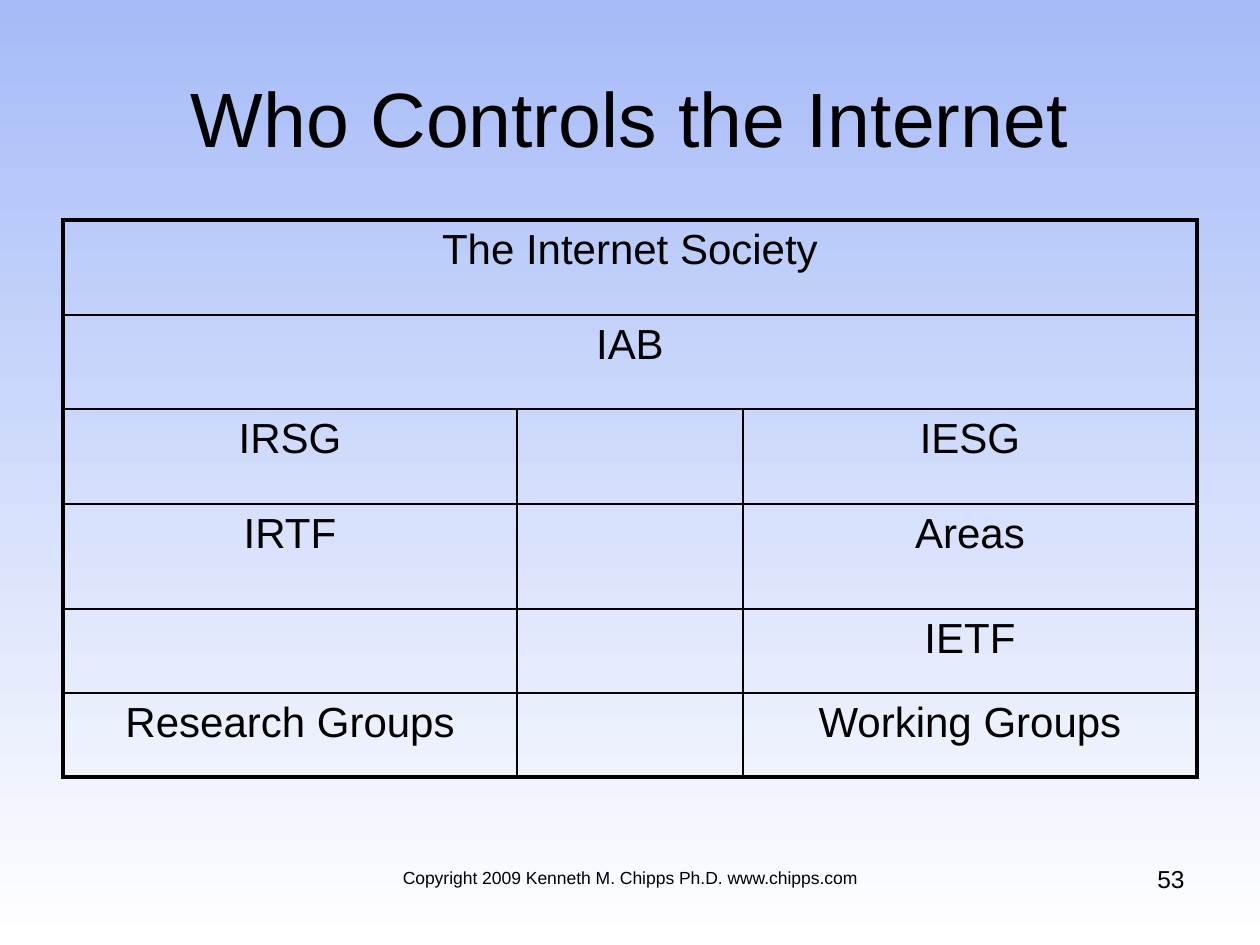
from lxml.etree import SubElement
from pptx import Presentation
from pptx.dml.color import RGBColor
from pptx.enum.text import MSO_ANCHOR, PP_ALIGN
from pptx.oxml.ns import qn
from pptx.util import Pt

PX = 914400 / 126
FONT = "Arial"
INK = {"text": "000000", "line": "000000", "top": "A6BBF8", "base": "FFFFFF"}

TITLE = "Who Controls the Internet"
ROWS = [
    ["The Internet Society"],
    ["IAB"],
    ["IRSG", "", "IESG"],
    ["IRTF", "", "Areas"],
    ["", "", "IETF"],
    ["Research Groups", "", "Working Groups"],
]
COLS = [454, 226, 454]
HEIGHTS = [95, 94, 95, 105, 84, 84]
NOTES = [
    ("Copyright 2009 Kenneth M. Chipps Ph.D. www.chipps.com",
     (378, 861, 504, 65), 10, PP_ALIGN.CENTER),
    ("53", (903, 858, 294, 65), 14, PP_ALIGN.RIGHT),
]
THIN, THICK = 1, 2.25


def px(*nums):
    return [round(n * PX) for n in nums]


def write(frame, text, size, align):
    frame.text = text
    par = frame.paragraphs[0]
    par.alignment = align
    par.font.name = FONT
    par.font.size = Pt(size)
    par.font.color.rgb = RGBColor.from_string(INK["text"])


def edge(cell, side, width):
    """Draw one border of a cell; side is L, R, T or B."""
    line = SubElement(cell._tc.get_or_add_tcPr(), qn(f"a:ln{side}"), w=str(Pt(width)))
    fill = SubElement(line, qn("a:solidFill"))
    SubElement(fill, qn("a:srgbClr"), val=INK["line"])


def fill_back(slide):
    fill = slide.background.fill
    fill.gradient()
    fill.gradient_angle = 270
    for stop, name in zip(fill.gradient_stops, ("top", "base")):
        stop.color.rgb = RGBColor.from_string(INK[name])


def add_title(slide):
    head = slide.shapes.title
    head.left, head.top, head.width, head.height = px(63, 38, 1134, 157)
    write(head.text_frame, TITLE, 44, PP_ALIGN.CENTER)
    head.text_frame.vertical_anchor = MSO_ANCHOR.MIDDLE


def add_grid(slide):
    last_row, last_col = len(ROWS) - 1, len(COLS) - 1
    box = px(63, 220, sum(COLS), sum(HEIGHTS))
    grid = slide.shapes.add_table(len(ROWS), len(COLS), *box).table
    grid.first_row = grid.horz_banding = False
    for col, width in zip(grid.columns, px(*COLS)):
        col.width = width
    for row, height in zip(grid.rows, px(*HEIGHTS)):
        row.height = height

    for r, texts in enumerate(ROWS):
        if len(texts) == 1:
            grid.cell(r, 0).merge(grid.cell(r, last_col))
        for c in range(len(COLS)):
            cell = grid.cell(r, c)
            outer = {"L": c == 0, "R": c == last_col, "T": r == 0, "B": r == last_row}
            if cell.is_merge_origin:
                outer["R"] = True
            for side, thick in outer.items():
                edge(cell, side, THICK if thick else THIN)
            cell.fill.background()
            if c < len(texts) and texts[c]:
                write(cell.text_frame, texts[c], 24, PP_ALIGN.CENTER)


def add_notes(slide):
    for text, box, size, align in NOTES:
        frame = slide.shapes.add_textbox(*px(*box)).text_frame
        frame.word_wrap = True
        write(frame, text, size, align)


def main():
    deck = Presentation()
    deck.slide_width, deck.slide_height = px(1260, 945)
    slide = deck.slides.add_slide(deck.slide_layouts[5])
    fill_back(slide)
    add_notes(slide)
    add_title(slide)
    add_grid(slide)
    deck.save("out.pptx")


if __name__ == "__main__":
    main()
